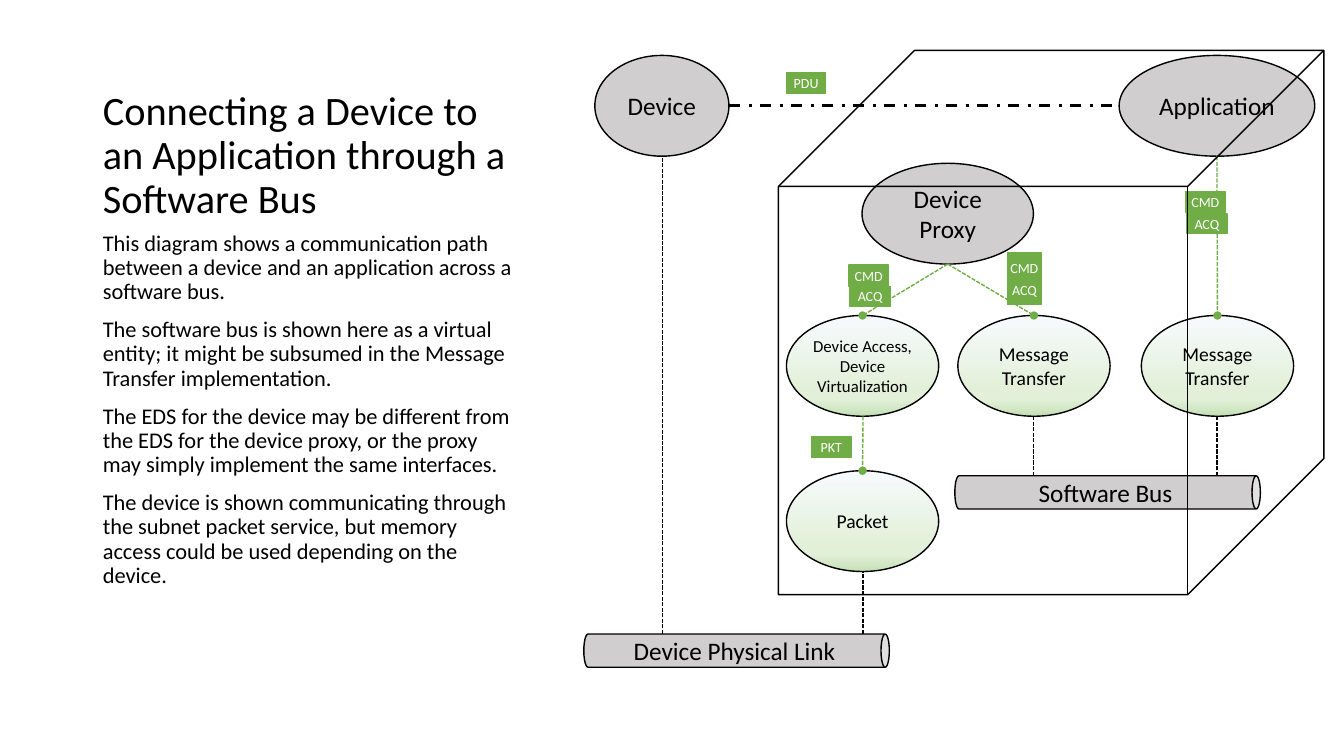
"""Build a slide showing a device connected to an application through a software bus."""
import copy

import pptx
import pptx.dml.color
import pptx.enum.dml
import pptx.enum.shapes
import pptx.enum.text
import pptx.oxml.ns
import pptx.oxml.xmlchemy
import pptx.util

PX = 9144
BLACK = pptx.dml.color.RGBColor(0x00, 0x00, 0x00)
WHITE = pptx.dml.color.RGBColor(0xFF, 0xFF, 0xFF)
GRAY = pptx.dml.color.RGBColor(0xD0, 0xCE, 0xCE)
GREEN = pptx.dml.color.RGBColor(0x70, 0xAD, 0x47)
ICE = pptx.dml.color.RGBColor(0xF7, 0xFA, 0xFD)
MINT = pptx.dml.color.RGBColor(0xE2, 0xF0, 0xD9)
LEAF = pptx.dml.color.RGBColor(0xC5, 0xE0, 0xB4)
FADE = [(0, ICE), (0.74, MINT), (0.83, MINT), (1, LEAF)]
FONT = "Calibri"
SHAPE = pptx.enum.shapes.MSO_SHAPE
DASH = pptx.enum.dml.MSO_LINE
ANCHOR = pptx.enum.text.MSO_ANCHOR
ALIGN = pptx.enum.text.PP_ALIGN
qn = pptx.oxml.ns.qn

deck = pptx.Presentation()
deck.slide_width, deck.slide_height = 1333 * PX, 750 * PX
slide = deck.slides.add_slide(deck.slide_layouts[7])


def add_figure(preset, box, text="", size=18, fill=GRAY, ink=BLACK, edge=BLACK, margin=10):
    figure = slide.shapes.add_shape(preset, *(n * PX for n in box))
    figure.shadow.inherit = False
    if fill is None:
        figure.fill.background()
    else:
        figure.fill.solid()
        figure.fill.fore_color.rgb = fill
    figure.line.color.rgb = edge
    figure.line.width = pptx.util.Pt(1)
    frame = figure.text_frame
    frame.word_wrap = True
    frame.vertical_anchor = ANCHOR.MIDDLE
    frame.margin_left = frame.margin_right = margin * PX
    if text:
        frame.text = text
        frame.paragraphs[0].alignment = ALIGN.CENTER
        font = frame.paragraphs[0].runs[0].font
        font.name, font.size, font.color.rgb = FONT, pptx.util.Pt(size), ink
    return figure


def add_link(start, end, color=BLACK, width=1, dash=DASH.SQUARE_DOT):
    link = slide.shapes.add_connector(
        pptx.enum.shapes.MSO_CONNECTOR.STRAIGHT, *(n * PX for n in start + end))
    link.line.color.rgb = color
    link.line.width = pptx.util.Pt(width)
    link.line.dash_style = dash
    properties = link._element.spPr
    properties.append(properties.makeelement(qn("a:effectLst"), {}))
    return link


unused = slide.placeholders[1]._element
unused.getparent().remove(unused)

heading = slide.shapes.title
heading.text_frame.text = "Connecting a Device to an Application through a Software Bus"
notes = slide.placeholders[2]
notes.text_frame.text = "\n".join([
    "This diagram shows a communication path between a device and an application across "
    "a software bus.",
    "The software bus is shown here as a virtual entity; it might be subsumed in the "
    "Message Transfer implementation.",
    "The EDS for the device may be different from the EDS for the device proxy, or the "
    "proxy may simply implement the same interfaces.",
    "The device is shown communicating through the subnet packet service, but memory "
    "access could be used depending on the device.",
])
for block, top, height, size, before, anchor in [
    (heading, 50, 175, 28.8, 0, ANCHOR.BOTTOM),
    (notes, 225, 417, 16, 10, ANCHOR.TOP),
]:
    block.left, block.top, block.width, block.height = (n * PX for n in (92, top, 430, height))
    block.text_frame.word_wrap = True
    block.text_frame.auto_size = pptx.enum.text.MSO_AUTO_SIZE.NONE
    block.text_frame.vertical_anchor = anchor
    for paragraph in block.text_frame.paragraphs:
        paragraph.alignment = ALIGN.LEFT
        paragraph.line_spacing = 0.9
        paragraph.space_before = pptx.util.Pt(before)
        font = paragraph.runs[0].font
        font.name, font.size, font.bold = FONT, pptx.util.Pt(size), False
        font.color.rgb = BLACK

for text, left, top, width in [
    ("Device", 590, 55, 133),
    ("Device Proxy", 855, 162, 170),
    ("Application", 1110, 55, 194),
]:
    add_figure(SHAPE.OVAL, (left, top, width, 100), text)

for text, left, top, size, source in [
    ("Device Access, Device Virtualization", 780, 313, 12, (940, 262)),
    ("Message Transfer", 950, 313, 14, (940, 262)),
    ("Message Transfer", 1132, 313, 14, (1207, 155)),
    ("Packet", 780, 467, 14, (856, 413)),
]:
    service = add_figure(SHAPE.OVAL, (left, top, 151, 100), text, size, margin=0)
    service.fill.gradient()
    service.fill.gradient_angle = 270
    stops = service._element.spPr.find(".//" + qn("a:gsLst"))
    stops.extend([copy.deepcopy(stop) for stop in stops])
    for stop, (position, color) in zip(service.fill.gradient_stops, FADE):
        stop.position = position
        stop.color.rgb = color
    call = add_link(source, (left + 76, top), GREEN)
    call.end_connect(service, 0)
    outline = call.line._get_or_add_ln()
    outline.append(outline.makeelement(qn("a:tailEnd"), {"type": "oval"}))

for x, start, end in [(856, 629, 567), (1025, 472, 413), (1207, 472, 413)]:
    add_link((x, start), (x, end))

cube_box = (772, 50, 541, 540)
for text, *box in [
    ("PKT", 805, 433, 39, 21),
    ("CMD", 842, 263, 39, 21),
    ("ACQ", 843, 284, 40, 20),
    ("CMD", 1176, 190, 39, 21),
    ("ACQ", 1177, 212, 40, 20),
    ("CMD", 999, 251, 34, 30),
    ("ACQ", 999, 274, 34, 28),
    ("PDU", 780, 72, 39, 21),
]:
    add_figure(SHAPE.RECTANGLE, box, text, 10, GREEN, WHITE, GREEN, 0)

for text, left, top in [("Software Bus", 1082, 337), ("Device Physical Link", 714, 494)]:
    pipe = add_figure(SHAPE.CAN, (left, top, 33, 303), text)
    pipe.rotation = 90
    pipe.text_frame._txBody.bodyPr.set("vert", "vert270")

add_figure(SHAPE.CUBE, cube_box, fill=None)
add_link((657, 629), (657, 155))
add_link((723, 105), (1110, 105), width=2, dash=DASH.DASH_DOT)

deck.save("out.pptx")
